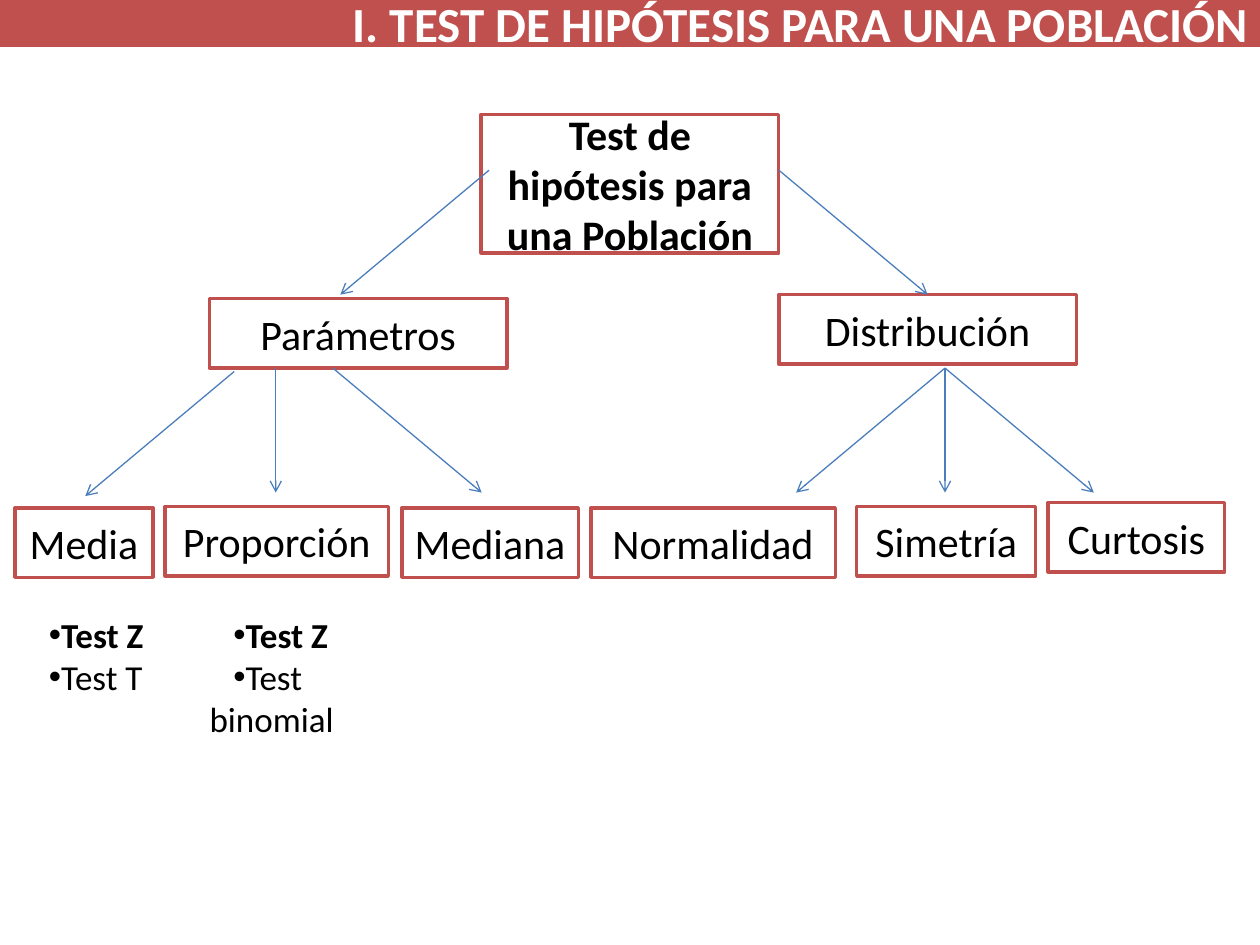
from lxml import etree
from pptx import Presentation
from pptx.dml.color import RGBColor
from pptx.enum import shapes, text
from pptx.oxml.ns import qn
from pptx.util import Cm, Pt

THEME = {
    "font": "Calibri", "red": "C0504D", "blue": "4B7EBC", "white": "FFFFFF", "black": "000000",
    "title": 28, "node": 24, "list": 20, "border": 2, "arrow": 0.75,
}

# All lengths are in centimetres.
SLIDE = (25.4, 19.05)
TITLE = "I. TEST DE HIPÓTESIS PARA UNA POBLACIÓN"
TITLE_HEIGHT = 0.92
WIDE, NODE_HEIGHT, ROOT_HEIGHT = 6, 1.4, 2.79

# label, left, top, width, height, bold
NODES = [
    ("Test de hipótesis para una Población", 9.7, 2.31, WIDE, ROOT_HEIGHT, True),
    ("Parámetros", 4.22, 6.02, WIDE, NODE_HEIGHT, False),
    ("Distribución", 15.7, 5.94, WIDE, NODE_HEIGHT, False),
    ("Media", 0.3, 10.24, 2.79, NODE_HEIGHT, False),
    ("Proporción", 3.33, 10.21, 4.5, NODE_HEIGHT, False),
    ("Mediana", 8.1, 10.24, 3.56, NODE_HEIGHT, False),
    ("Normalidad", 11.91, 10.24, 4.93, NODE_HEIGHT, False),
    ("Simetría", 17.27, 10.21, 3.61, NODE_HEIGHT, False),
    ("Curtosis", 21.13, 10.13, 3.56, NODE_HEIGHT, False),
]

# start x, start y, direction; every arrow has the same drop and reach
ARROWS = [
    (9.86, 3.43, -1), (15.7, 3.43, 1),
    (4.72, 7.49, -1), (5.56, 7.42, 0), (6.71, 7.42, 1),
    (19.05, 7.42, -1), (19.05, 7.42, 0), (19.05, 7.42, 1),
]
REACH, DROP = 3, 2.51

# one list per column, each item with its weight
TEST_LISTS = [
    [("Test Z", True), ("Test T", False)],
    [("Test Z", True), ("Test binomial", False)],
]
LIST_TOP, LIST_HEIGHT, LIST_PITCH, LIST_WIDTH = 12.24, 3.4, 3.72, 4.22


def color(name):
    return RGBColor.from_string(THEME[name])


def place(sp, left, top, width, height):
    for name, value in {"left": left, "top": top, "width": width, "height": height}.items():
        setattr(sp, name, Cm(value))


def paint(sp, fill):
    sp.fill.solid()
    sp.fill.fore_color.rgb = color(fill)
    sp.line.color.rgb = color("red")
    sp.line.width = Pt(THEME["border"])


def write(p, words, size, ink, align, bold):
    for name, value in {"alignment": align, "line_spacing": 1.0,
                        "space_before": Pt(0), "space_after": Pt(0)}.items():
        setattr(p, name, value)
    r = p.add_run()
    r.text = words
    for name, value in {"name": THEME["font"], "size": Pt(THEME[size]), "bold": bold}.items():
        setattr(r.font, name, value)
    r.font.color.rgb = color(ink)


def set_frame(tf, anchor):
    for name, value in {"word_wrap": True, "auto_size": text.MSO_AUTO_SIZE.NONE,
                        "vertical_anchor": anchor}.items():
        setattr(tf, name, value)


def add_title(sp):
    place(sp, 0, 0, SLIDE[0], TITLE_HEIGHT)
    paint(sp, "red")
    set_frame(sp.text_frame, text.MSO_ANCHOR.MIDDLE)
    write(sp.text_frame.paragraphs[0], TITLE, "title", "white", text.PP_ALIGN.RIGHT, True)


def add_node(slide, label, left, top, width, height, bold):
    sp = slide.shapes.add_shape(shapes.MSO_SHAPE.RECTANGLE, 0, 0, 0, 0)
    place(sp, left, top, width, height)
    sp.shadow.inherit = False
    paint(sp, "white")
    set_frame(sp.text_frame, text.MSO_ANCHOR.MIDDLE)
    write(sp.text_frame.paragraphs[0], label, "node", "black", text.PP_ALIGN.CENTER, bold)


def add_arrow(slide, x, y, direction):
    line = slide.shapes.add_connector(shapes.MSO_CONNECTOR.STRAIGHT, Cm(x), Cm(y),
                                      Cm(x + direction * REACH), Cm(y + DROP))
    line.line.color.rgb = color("blue")
    line.line.width = Pt(THEME["arrow"])
    etree.SubElement(line.line._get_or_add_ln(), qn("a:tailEnd"), type="arrow")
    etree.SubElement(line._element.spPr, qn("a:effectLst"))


def fill_list(sp, column, items):
    place(sp, column * LIST_PITCH, LIST_TOP, LIST_WIDTH, LIST_HEIGHT)
    tf = sp.text_frame
    set_frame(tf, text.MSO_ANCHOR.TOP)
    for i, (words, bold) in enumerate(items):
        p = tf.add_paragraph() if i else tf.paragraphs[0]
        write(p, words, "list", "black", text.PP_ALIGN.LEFT, bold)
        pPr = p._p.get_or_add_pPr()
        pPr.set("marL", str(Cm(0.25)))
        pPr.set("indent", str(Cm(0.48)))
        etree.SubElement(pPr, qn("a:buFont"), typeface="Arial")
        etree.SubElement(pPr, qn("a:buChar"), char="•")


def main():
    prs = Presentation()
    prs.slide_width, prs.slide_height = map(Cm, SLIDE)
    slide = prs.slides.add_slide(prs.slide_layouts.get_by_name("Two Content"))
    title, *bodies = slide.placeholders
    add_title(title)
    for node in NODES:
        add_node(slide, *node)
    for arrow in ARROWS:
        add_arrow(slide, *arrow)
    for column, (body, items) in enumerate(zip(bodies, TEST_LISTS)):
        fill_list(body, column, items)
    prs.save("out.pptx")


if __name__ == "__main__":
    main()
